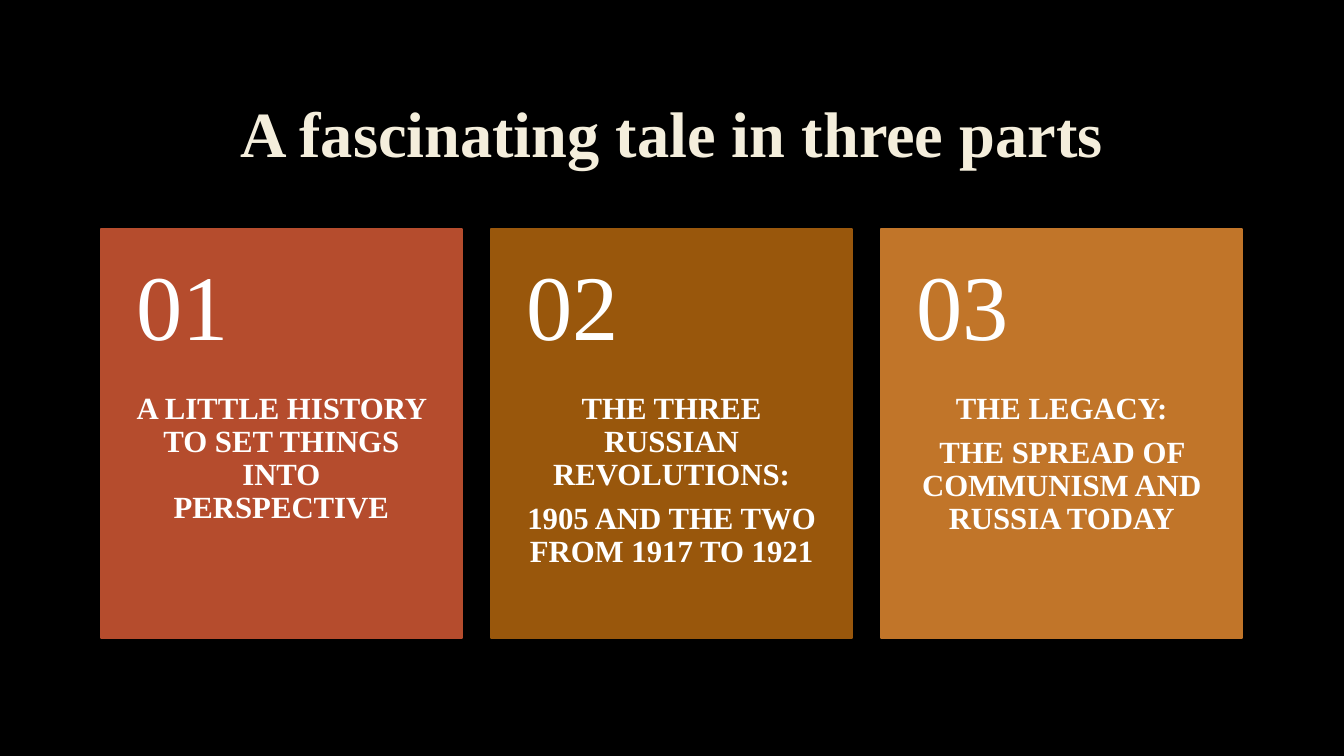
"""Build a title slide with three numbered cards."""
from pptx import Presentation
from pptx.dml.color import RGBColor
from pptx.enum.shapes import MSO_SHAPE
from pptx.enum.text import MSO_ANCHOR, PP_ALIGN
from pptx.util import Inches, Pt

COLORS = {"background": "000000", "title": "F4EEDC", "text": "FFFFFF",
          "red": "B54C2D", "brown": "99570C", "orange": "C17529"}
FONT = "Times New Roman"
LEFT, TOP = 1, 2.27
CARD_W, CARD_H = 3.58, 4.06
PITCH = 3.87
NUMBER_H = 0.4 * CARD_H
CARDS = [
    ("red", ["A LITTLE HISTORY TO SET THINGS INTO PERSPECTIVE"]),
    ("brown", ["THE THREE RUSSIAN REVOLUTIONS:",
               "1905 AND THE TWO FROM 1917 TO 1921"]),
    ("orange", ["THE LEGACY:", "THE SPREAD OF COMMUNISM AND RUSSIA TODAY"]),
]


def rgb(name):
    return RGBColor.from_string(COLORS[name])


def add_text(slide, box, lines, size, color="text", bold=False,
             align=PP_ALIGN.CENTER, anchor=MSO_ANCHOR.MIDDLE,
             insets=(0.1, 0.05, 0.1, 0.05)):
    tf = slide.shapes.add_textbox(*map(Inches, box)).text_frame
    tf.word_wrap = True
    tf.vertical_anchor = anchor
    (tf.margin_left, tf.margin_top,
     tf.margin_right, tf.margin_bottom) = map(Inches, insets)
    for i, line in enumerate(lines):
        p = tf.add_paragraph() if i else tf.paragraphs[0]
        p.alignment = align
        p.line_spacing = 0.9
        p.space_after = Pt(round(0.35 * size, 1))
        r = p.add_run()
        r.text = line
        r.font.name = FONT
        r.font.size = Pt(size)
        r.font.bold = bold
        r.font.color.rgb = rgb(color)


def add_card(slide, index, color, lines):
    x = LEFT + index * PITCH
    sp = slide.shapes.add_shape(
        MSO_SHAPE.RECTANGLE, *map(Inches, (x, TOP, CARD_W, CARD_H)))
    sp.shadow.inherit = False
    sp.fill.solid()
    sp.fill.fore_color.rgb = rgb(color)
    sp.line.color.rgb = rgb(color)
    sp.line.width = Pt(1.25)
    add_text(slide, (x, TOP + NUMBER_H, CARD_W, CARD_H - NUMBER_H), lines, 22,
             bold=True, anchor=MSO_ANCHOR.TOP, insets=(0.35, 0, 0.35, 0.36))
    add_text(slide, (x, TOP, CARD_W, NUMBER_H), [f"{index + 1:02d}"], 66,
             align=PP_ALIGN.LEFT, insets=(0.35, 0.18, 0.35, 0.18))


def main():
    prs = Presentation()
    prs.slide_width, prs.slide_height = Inches(13.33), Inches(7.5)
    slide = prs.slides.add_slide(prs.slide_layouts[6])
    slide.background.fill.solid()
    slide.background.fill.fore_color.rgb = rgb("background")
    add_text(slide, (LEFT, 0.67, 2 * PITCH + CARD_W, 1.38),
             ["A fascinating tale in three parts"], 46, "title", bold=True)
    for index, (color, lines) in enumerate(CARDS):
        add_card(slide, index, color, lines)
    prs.save("out.pptx")


if __name__ == "__main__":
    main()
